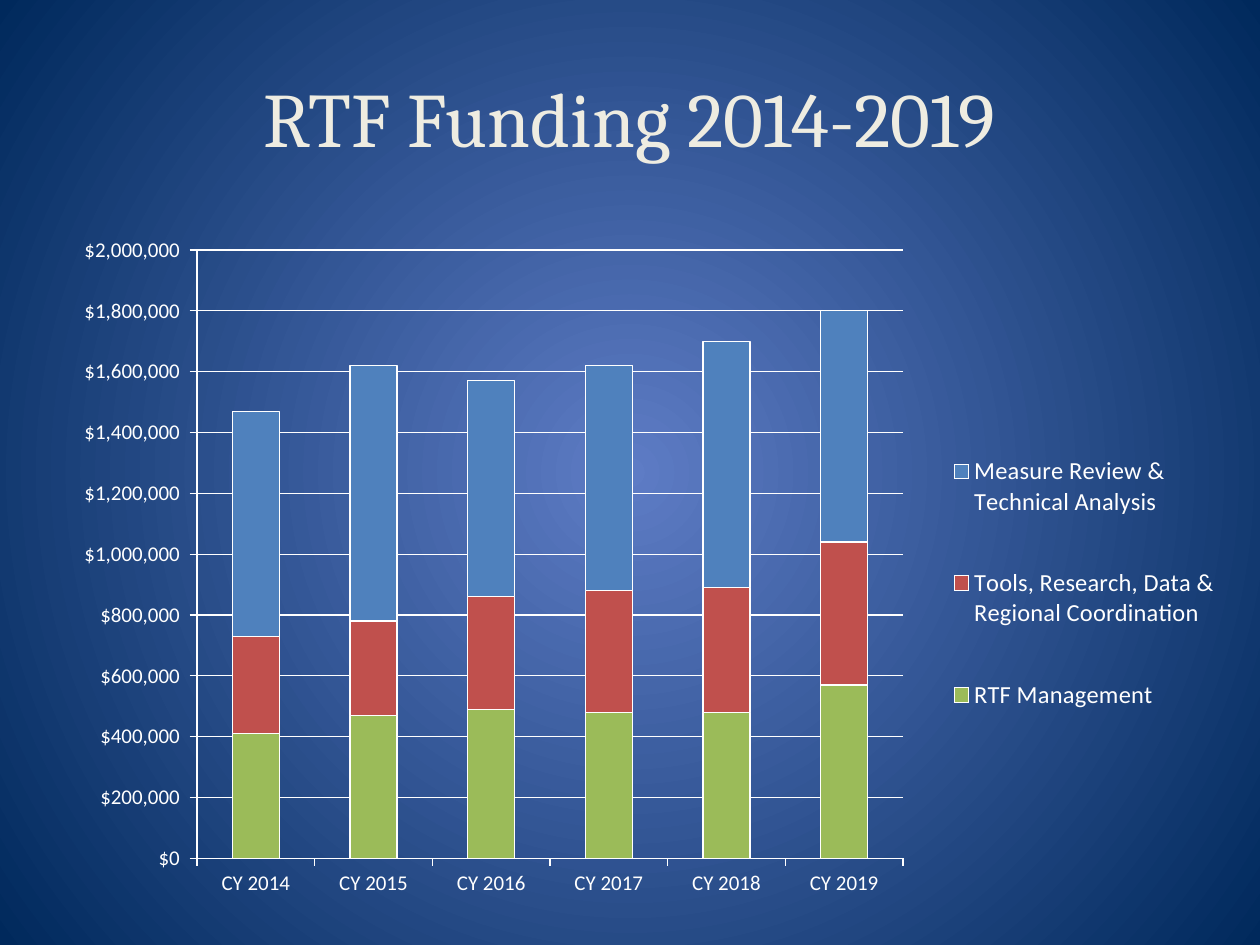
from lxml import etree
from pptx import Presentation
from pptx.chart.data import CategoryChartData
from pptx.dml.color import RGBColor
from pptx.enum.chart import XL_CHART_TYPE, XL_LEGEND_POSITION, XL_TICK_MARK
from pptx.enum.text import MSO_ANCHOR, PP_ALIGN
from pptx.oxml import parse_xml
from pptx.oxml.ns import nsdecls, qn
from pptx.util import Inches, Pt


def style(font, size, color="FFFFFF", name="Calibri"):
    font.size, font.name = Pt(size), name
    font.color.rgb = RGBColor.from_string(color)


def place(part, index, **fields):
    """Give a chart part a fixed layout, in fractions of the chart."""
    for old in part.findall(qn("c:layout")):
        part.remove(old)
    layout = parse_xml(f"<c:layout {nsdecls('c')}><c:manualLayout/></c:layout>")
    for key, value in fields.items():
        etree.SubElement(layout[0], qn(f"c:{key}")).set("val", str(value))
    part.insert(index, layout)


white = RGBColor.from_string("FFFFFF")
prs = Presentation()
prs.slide_width, prs.slide_height = Inches(10), Inches(7.5)
slide = prs.slides.add_slide(prs.slide_layouts[6])

# Radial background
fill = slide.background.fill
fill.gradient()
for stop, color in zip(fill.gradient_stops, ("5E7CC5", "00295C")):
    stop.color.rgb = RGBColor.from_string(color)
grad = slide.element.find(".//" + qn("a:gradFill"))
grad.replace(grad.find(qn("a:lin")), parse_xml(
    f'<a:path {nsdecls("a")} path="circle">'
    '<a:fillToRect l="50000" t="50000" r="50000" b="50000"/></a:path>'))

# Title
box = slide.shapes.add_textbox(Inches(0.5), Inches(0.3), Inches(9), Inches(1.25))
frame = box.text_frame
frame.word_wrap = True
frame.vertical_anchor = MSO_ANCHOR.MIDDLE
title = frame.paragraphs[0]
title.alignment = PP_ALIGN.CENTER
run = title.add_run()
run.text = "RTF Funding 2014-2019"
style(run.font, 44, "EEECE1", "Cambria")

# Stacked funding chart
money = '"$"#,##0_);\\("$"#,##0\\)'
series = [
    ("RTF Management", "9BBB59", (410, 470, 490, 480, 480, 570)),
    ("Tools, Research, Data & Regional Coordination", "C0504D",
     (320, 310, 370, 400, 410, 470)),
    ("Measure Review & Technical Analysis", "4F81BD",
     (740, 840, 710, 740, 810, 760)),
]
data = CategoryChartData(number_format=money)
data.categories = [f"CY {year}" for year in range(2014, 2020)]
for name, color, thousands in series:
    data.add_series(name, [value * 1000 for value in thousands])
chart = slide.shapes.add_chart(
    XL_CHART_TYPE.COLUMN_STACKED, Inches(0.67), Inches(1.83),
    Inches(9.17), Inches(5.33), data).chart
chart.has_title = False
style(chart.font, 10)

plot = chart.plots[0]
plot.gap_width, plot.overlap = 150, 100
plot.vary_by_categories = False
for bar, (name, color, thousands) in zip(plot.series, series):
    bar.format.fill.solid()
    bar.format.fill.fore_color.rgb = RGBColor.from_string(color)
    bar.format.line.color.rgb = white
    bar.format.line.width = Pt(0.75)

values = chart.value_axis
values.minimum_scale, values.maximum_scale = 0, 2000000
values.major_unit = 200000
values.has_major_gridlines = True
values.tick_labels.number_format = money
values.tick_labels.number_format_is_linked = False
for axis in (chart.category_axis, values):
    axis.major_tick_mark = XL_TICK_MARK.OUTSIDE
    style(axis.tick_labels.font, 12)
for item in (chart.category_axis, values, values.major_gridlines):
    item.format.line.color.rgb = white
    item.format.line.width = Pt(0.75)

chart.has_legend = True
legend = chart.legend
legend.position = XL_LEGEND_POSITION.RIGHT
legend.include_in_layout = False
style(legend.font, 14)

area = chart.element.find(".//" + qn("c:plotArea"))
place(area, 0, layoutTarget="inner", xMode="edge", yMode="edge",
      x=0.096, y=0.029, w=0.612, h=0.906)
place(chart.element.find(".//" + qn("c:legend")), 1, xMode="edge", yMode="edge",
      x=0.74, y=0.26, w=0.25, h=0.53)

prs.save("out.pptx")
